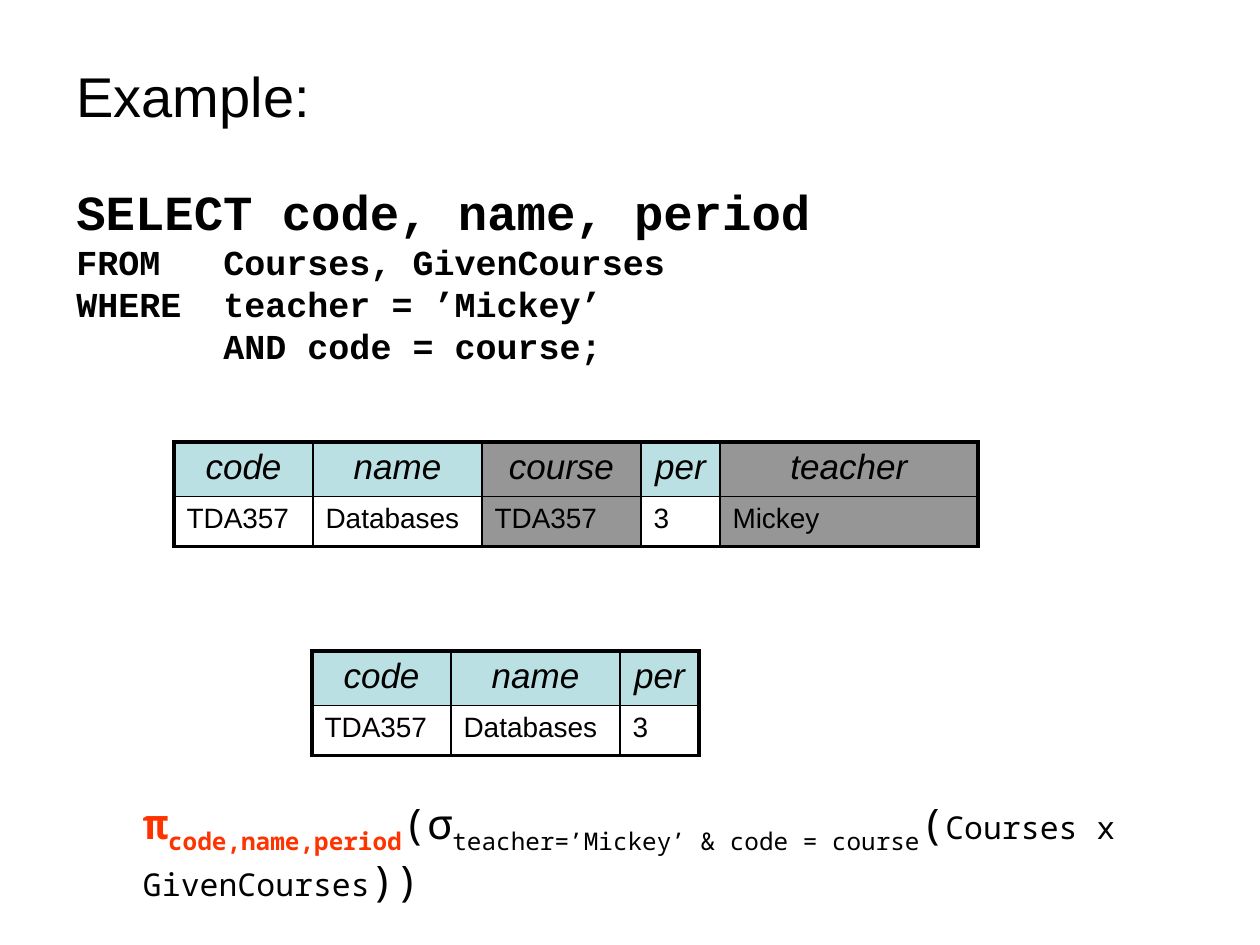
from lxml import etree
from pptx import Presentation
from pptx import util as u
from pptx.dml.color import RGBColor
from pptx.enum import text
from pptx.oxml import ns

PX = 914400 / 126
BLACK, WHITE, RED = "000000", "FFFFFF", "FF3300"
TEAL, GRAY = "BBE0E3", "969696"
WIDTHS = {"code": 139, "name": 169, "course": 159, "per": 79, "teacher": 258}
ROW_HEIGHTS = (54, 50)
SIDES = ("L", "R", "T", "B")


def px(length):
    """Turn whole pixels into EMU."""
    return u.Emu(round(length * PX))


def color(value):
    """Turn a hex string into a colour."""
    return RGBColor.from_string(value)


def add_text(paragraph, words, size=20, font="Arial", fill=BLACK, bold=False, italic=False, baseline=0):
    """Add formatted words, with a line break at each newline."""
    for index, line in enumerate(words.split("\n")):
        if index:
            paragraph.add_line_break()
        if not line:
            continue
        run = paragraph.add_run()
        run.text = line
        run.font.size = u.Pt(size)
        run.font.name = font
        run.font.bold = bold
        run.font.italic = italic
        run.font.color.rgb = color(fill)
        if baseline:
            run._r.get_or_add_rPr().set("baseline", str(baseline * 1000))


def add_box(slide, left, top, width, height, before=0):
    """Add a wrapping text box and return its frame."""
    frame = slide.shapes.add_textbox(px(left), px(top), px(width), px(height)).text_frame
    frame.word_wrap = True
    frame.paragraphs[0].space_before = u.Pt(before)
    return frame


def add_tab_stop(paragraph, position):
    """Set one left tab stop on a paragraph."""
    stops = etree.SubElement(paragraph._p.get_or_add_pPr(), ns.qn("a:tabLst"))
    etree.SubElement(stops, ns.qn("a:tab"), pos=str(px(position)), algn="l")


def set_borders(cell, outer_sides):
    """Draw thick borders on the outer sides and thin ones elsewhere."""
    properties = cell._tc.get_or_add_tcPr()
    for side in SIDES:
        width = u.Pt(2.25 if side in outer_sides else 1)
        line = etree.SubElement(properties, ns.qn(f"a:ln{side}"), w=str(width))
        fill = etree.SubElement(line, ns.qn("a:solidFill"))
        etree.SubElement(fill, ns.qn("a:srgbClr"), val=BLACK)


def add_relation(slide, left, top, record, dropped=()):
    """Add a table of one record, graying the dropped columns."""
    widths = [WIDTHS[name] for name in record]
    table = slide.shapes.add_table(
        2, len(record), px(left), px(top), px(sum(widths)), px(sum(ROW_HEIGHTS))).table
    table.first_row = table.horz_banding = False
    for row, height in zip(table.rows, ROW_HEIGHTS):
        row.height = px(height)
    for column, (name, value) in enumerate(record.items()):
        table.columns[column].width = px(widths[column])
        for row, words in enumerate((name, value)):
            cell = table.cell(row, column)
            header = row == 0
            outer = {"T" if header else "B"}
            if column == 0:
                outer.add("L")
            if column == len(record) - 1:
                outer.add("R")
            set_borders(cell, outer)
            cell.fill.solid()
            cell.fill.fore_color.rgb = color(GRAY if name in dropped else TEAL if header else WHITE)
            paragraph = cell.text_frame.paragraphs[0]
            paragraph.alignment = text.PP_ALIGN.CENTER if header else text.PP_ALIGN.LEFT
            add_text(paragraph, words, size=20 if header else 16, italic=header)


def add_query(slide):
    """Add the SQL query with its clauses aligned by a tab stop."""
    paragraph = add_box(slide, 64, 175, 1052, 199, before=7).paragraphs[0]
    add_tab_stop(paragraph, 147)
    style = {"font": "Courier New", "bold": True}
    add_text(paragraph, "SELECT code, name, period\n", size=28, **style)
    add_text(paragraph, "FROM\tCourses, GivenCourses\nWHERE\tteacher = ’Mickey’\n\tAND code = course;", **style)


def add_formula(slide):
    """Add the relational algebra expression."""
    frame = add_box(slide, 0, 820, 1260, 63)
    frame.margin_left = px(143)
    frame.vertical_anchor = text.MSO_ANCHOR.MIDDLE
    pieces = (
        ("π", {"fill": RED, "bold": True}),
        ("code,name,period", {"fill": RED, "bold": True, "baseline": -25}),
        ("(σ", {}),
        ("teacher=’Mickey’ & code = course", {"baseline": -25}),
        ("(", {}),
        ("Courses x GivenCourses", {"size": 18}),
        ("))", {}),
    )
    for words, style in pieces:
        add_text(frame.paragraphs[0], words, **{"size": 24, "font": "Noto Sans Mono", **style})


def main():
    """Build and save the slide."""
    presentation = Presentation()
    presentation.slide_width, presentation.slide_height = px(1260), px(945)
    slide = presentation.slides.add_slide(presentation.slide_layouts[6])
    add_text(add_box(slide, 64, 55, 1134, 863, before=3).paragraphs[0], "Example:", size=32)
    add_query(slide)
    add_formula(slide)
    product = {"code": "TDA357", "name": "Databases", "course": "TDA357", "per": "3", "teacher": "Mickey"}
    dropped = ("course", "teacher")
    add_relation(slide, 174, 442, product, dropped)
    add_relation(slide, 312, 651, {name: value for name, value in product.items() if name not in dropped})
    presentation.save("out.pptx")


if __name__ == "__main__":
    main()
